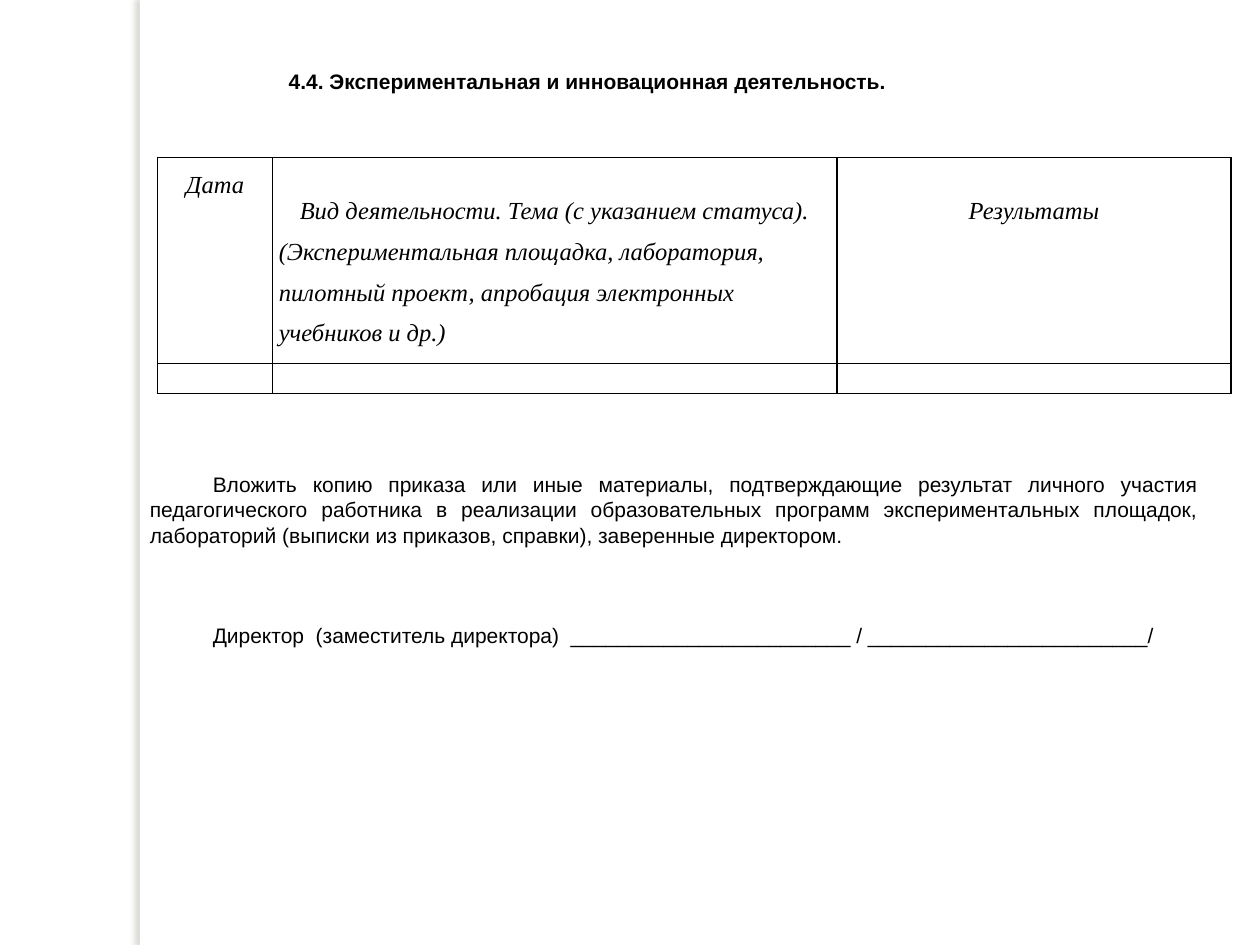
from dataclasses import dataclass

from lxml.etree import SubElement
from pptx import Presentation
from pptx.dml.color import RGBColor
from pptx.enum.shapes import MSO_SHAPE
from pptx.enum.text import MSO_ANCHOR, PP_ALIGN
from pptx.oxml.ns import qn
from pptx.util import Cm, Pt

BLACK = RGBColor(0x00, 0x00, 0x00)
WHITE = RGBColor(0xFF, 0xFF, 0xFF)
SHADOW = RGBColor(0x73, 0x6F, 0x63)


@dataclass(frozen=True)
class BodyParagraph:
    text: str
    indent: Cm
    space_before: Pt = Pt(0)
    bold: bool = False


@dataclass(frozen=True)
class HeaderCell:
    lines: tuple[tuple[str, PP_ALIGN], ...]
    top_margin: Cm = Cm(0)


BODY = (
    BodyParagraph("4.4. Экспериментальная и инновационная деятельность.", Cm(2.8), bold=True),
    BodyParagraph(
        "Вложить копию приказа или иные материалы, подтверждающие результат личного участия "
        "педагогического работника в реализации образовательных программ экспериментальных "
        "площадок, лабораторий (выписки из приказов, справки), заверенные директором.",
        Cm(1.27), Pt(216)),
    BodyParagraph(
        f"Директор  (заместитель директора)  {'_' * 24} / {'_' * 24}/",
        Cm(1.27), Pt(43.2)),
)
HEADERS = (
    HeaderCell((("Дата", PP_ALIGN.CENTER),)),
    HeaderCell((
        ("Вид деятельности. Тема (с указанием статуса).", PP_ALIGN.CENTER),
        ("(Экспериментальная площадка, лаборатория, пилотный проект, "
         "апробация электронных учебников и др.)", PP_ALIGN.LEFT),
    ), Cm(0.54)),
    HeaderCell((("Результаты", PP_ALIGN.CENTER),), Cm(0.54)),
)
COLUMN_WIDTHS = (Cm(2.31), Cm(11.38), Cm(7.95))
ROW_HEIGHTS = (Cm(4.15), Cm(0.6))


def add_page_edge(page, height: int) -> None:
    """Add the narrow white strip that casts a soft shadow to the left."""
    edge = page.shapes.add_shape(MSO_SHAPE.RECTANGLE, Cm(2.82), 0, Cm(0.2), height)
    edge.fill.solid()
    edge.fill.fore_color.rgb = WHITE
    edge.line.fill.background()
    edge.shadow.inherit = False
    effects = edge.element.spPr.find(qn("a:effectLst"))
    shadow = SubElement(effects, qn("a:outerShdw"), blurRad=str(Pt(3)), dist=str(Pt(3)),
                        dir=str(180 * 60000), algn="ctr", rotWithShape="0")
    color = SubElement(shadow, qn("a:srgbClr"), val=str(SHADOW))
    SubElement(color, qn("a:alpha"), val="25000")


def add_body(page) -> None:
    box = page.shapes.add_textbox(Cm(2.77), Cm(1.19), Cm(21.64), Cm(12.07))
    frame = box.text_frame
    frame.word_wrap = True
    frame.vertical_anchor = MSO_ANCHOR.MIDDLE
    for index, item in enumerate(BODY):
        para = frame.add_paragraph() if index else frame.paragraphs[0]
        para.text = item.text
        para.alignment = PP_ALIGN.JUSTIFY
        para.space_before = item.space_before
        para.font.name = "Arial"
        para.font.size = Pt(12)
        para.font.bold = item.bold
        para.font.color.rgb = BLACK
        properties = para._p.get_or_add_pPr()
        properties.set("marL", "0")
        properties.set("indent", str(item.indent))


def format_cell(cell) -> None:
    """Give a cell thin black borders, no fill and narrow margins."""
    properties = cell._tc.get_or_add_tcPr()
    for side in ("lnL", "lnR", "lnT", "lnB"):
        border = SubElement(properties, qn(f"a:{side}"), w=str(Pt(1)))
        fill = SubElement(border, qn("a:solidFill"))
        SubElement(fill, qn("a:srgbClr"), val=str(BLACK))
    cell.fill.background()
    cell.margin_left = cell.margin_right = Cm(0.13)
    cell.margin_top = cell.margin_bottom = 0
    cell.text_frame.paragraphs[0].font.size = Pt(12)


def fill_header(cell, header: HeaderCell) -> None:
    cell.margin_top = header.top_margin
    frame = cell.text_frame
    for index, (text, alignment) in enumerate(header.lines):
        para = frame.add_paragraph() if index else frame.paragraphs[0]
        para.text = text
        para.alignment = alignment
        para.line_spacing = 1.5
        para.font.name = "Times New Roman"
        para.font.size = Pt(14)
        para.font.bold = False
        para.font.italic = True
        para.font.color.rgb = BLACK


def add_activity_table(page) -> None:
    table = page.shapes.add_table(len(ROW_HEIGHTS), len(COLUMN_WIDTHS), Cm(3.18), Cm(3.18),
                                  sum(COLUMN_WIDTHS), sum(ROW_HEIGHTS)).table
    table.first_row = False
    table.horz_banding = False
    for column, width in zip(table.columns, COLUMN_WIDTHS):
        column.width = width
    for row, height in zip(table.rows, ROW_HEIGHTS):
        row.height = height
    for cell in table.iter_cells():
        format_cell(cell)
    for cell, header in zip(table.rows[0].cells, HEADERS):
        fill_header(cell, header)


def main() -> None:
    deck = Presentation()
    deck.slide_width, deck.slide_height = Cm(25.4), Cm(19.05)
    page = deck.slides.add_slide(deck.slide_layouts[6])
    page.background.fill.solid()
    page.background.fill.fore_color.rgb = WHITE
    add_page_edge(page, deck.slide_height)
    add_body(page)
    add_activity_table(page)
    deck.save("out.pptx")


if __name__ == "__main__":
    main()
